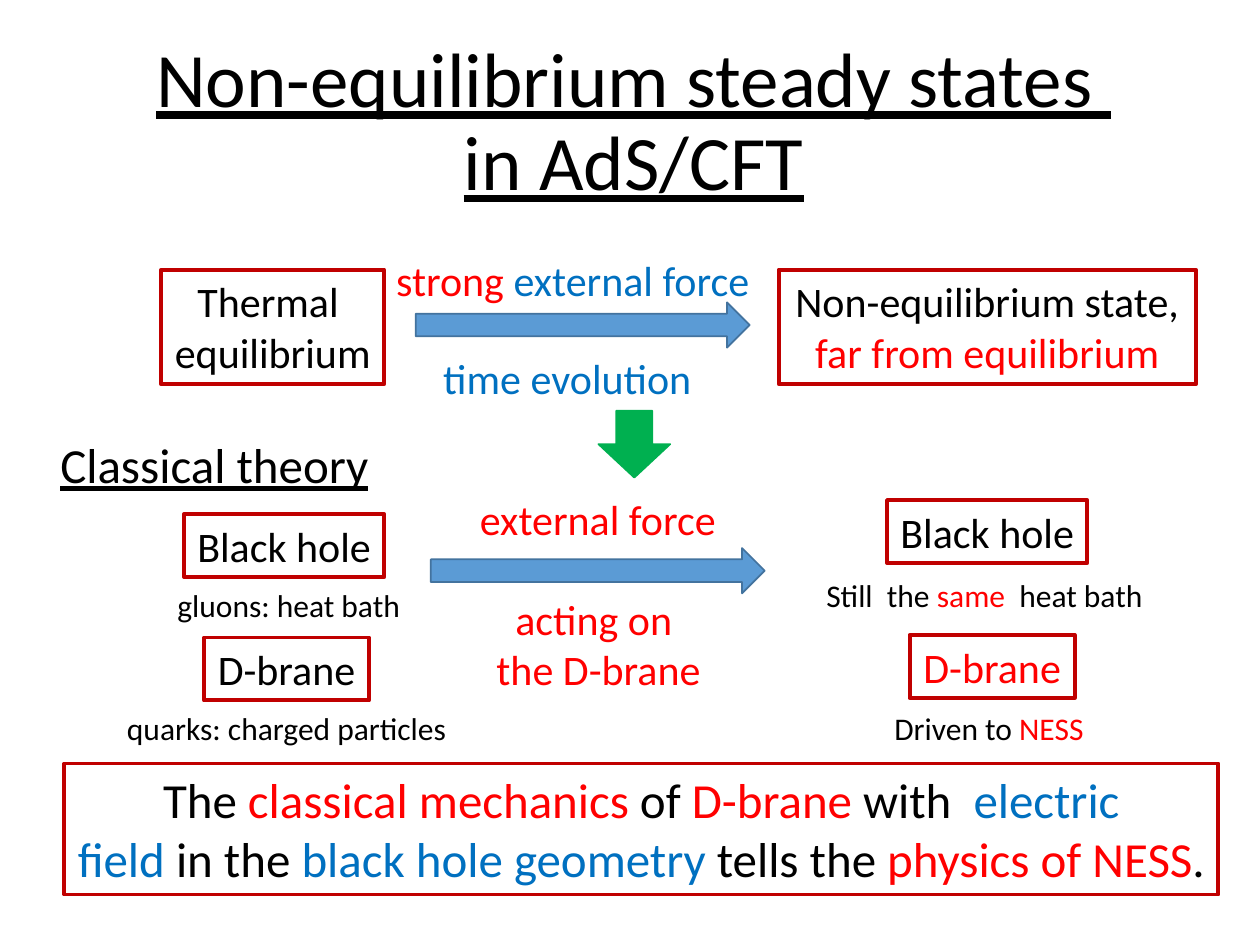
import pptx
import pptx.util
import pptx.dml.color
import pptx.enum.shapes
import pptx.enum.text

Pt = pptx.util.Pt
SHAPE = pptx.enum.shapes.MSO_SHAPE
ALIGN = pptx.enum.text.PP_ALIGN
FONT = "Calibri"
BLACK, RED, BLUE = "000000", "FF0000", "0070C0"
FRAME, FILL, EDGE, GREEN = "C00000", "5B9BD5", "43739E", "00B050"


def color(code):
    return pptx.dml.color.RGBColor.from_string(code)


def place(box, left, top, width, height):
    """Turn offsets within a region into slide lengths."""
    return [Pt(v) for v in (box[0] + left, box[1] + top, width, height)]


def write(shape, lines, size, align=ALIGN.CENTER, wrap=False):
    """Fill a shape with lines, each a list of (words, colour) runs."""
    frame = shape.text_frame
    frame.word_wrap = wrap
    frame.auto_size = pptx.enum.text.MSO_AUTO_SIZE.SHAPE_TO_FIT_TEXT
    for i, line in enumerate(lines):
        para = frame.add_paragraph() if i else frame.paragraphs[0]
        para.alignment = align
        para.font.size, para.font.name = Pt(size), FONT
        for words, code in line:
            run = para.add_run()
            run.text = words
            run.font.color.rgb = color(code)


def label(slide, spot, lines, size=24, align=ALIGN.CENTER):
    shape = slide.shapes.add_textbox(*spot)
    write(shape, lines, size, align)
    return shape


def framed(slide, spot, lines, size=24, wrap=False):
    shape = slide.shapes.add_shape(SHAPE.RECTANGLE, *spot)
    shape.shadow.inherit = False
    shape.fill.background()
    shape.line.color.rgb = color(FRAME)
    shape.line.width = Pt(2.25)
    write(shape, lines, size, wrap=wrap)
    shape.text_frame.vertical_anchor = pptx.enum.text.MSO_ANCHOR.TOP


def arrow(slide, spot, kind=SHAPE.RIGHT_ARROW, fill=FILL, edge=EDGE):
    shape = slide.shapes.add_shape(kind, *spot)
    shape.shadow.inherit = False
    shape.fill.solid()
    shape.fill.fore_color.rgb = color(fill)
    shape.line.color.rgb = color(edge)
    shape.line.width = Pt(1)


def heading(slide, box):
    title = slide.shapes.title
    title.left, title.top, title.width, title.height = place(box, 0, 0, 620.6, 104.4)
    frame = title.text_frame
    frame.text = "Non-equilibrium steady states \vin AdS/CFT"
    frame.vertical_anchor = pptx.enum.text.MSO_ANCHOR.MIDDLE
    para = frame.paragraphs[0]
    para.alignment, para.line_spacing = ALIGN.CENTER, 0.9
    font = para.font
    font.name, font.size, font.underline = FONT, Pt(44), True
    font.color.rgb = color(BLACK)


def evolve(slide, box):
    """Thermal equilibrium driven to a non-equilibrium state."""
    framed(slide, place(box, 0, 0, 127.4, 65.5),
           [[("Thermal ", BLACK)], [("equilibrium", BLACK)]])
    label(slide, place(box, 126, -12.2, 218.2, 36),
          [[("strong", RED), (" external force", BLUE)]])
    arrow(slide, place(box, 145.4, 18.7, 190.8, 25.9))
    label(slide, place(box, 154, 44, 157.7, 36),
          [[("time evolution", BLUE)]], align=ALIGN.LEFT)
    framed(slide, place(box, 352.8, 0, 238.3, 65.5),
           [[("Non-equilibrium state,", BLACK)],
            [("far from equilibrium", RED)]], wrap=True)


def force(slide, box):
    """External force acting on the D-brane."""
    label(slide, place(box, 20.2, 0, 150.5, 36), [[("external force", RED)]])
    arrow(slide, place(box, 0, 34.6, 190.8, 25.9))
    label(slide, place(box, 29.6, 57, 132.5, 65.5),
          [[("acting on ", RED)], [("the D-brane", RED)]])


def pair(slide, box, name, width, indent, note, span, drop, tint=BLACK):
    """A framed name with a note below it."""
    framed(slide, place(box, indent, 0, width, 36), [[(name, tint)]])
    label(slide, place(box, 0, drop, span, 28.8), [note], 18, ALIGN.LEFT)


def theory(slide, box):
    """Classical theory: black hole and D-brane, before and after."""
    head = label(slide, place(box, 0, 0, 192.2, 41),
                 [[("Classical theory", BLACK)]], 28, ALIGN.LEFT)
    head.text_frame.paragraphs[0].font.underline = True
    x, y = box
    hole, brane = ("Black hole", 114.5), ("D-brane", 94.3)
    # Before
    pair(slide, (x + 66.9, y + 49), *hole, 10.8,
         [("gluons: heat bath", BLACK)], 143.3, 37.4)
    pair(slide, (x + 38.1, y + 119.5), *brane, 51.1,
         [("quarks: charged particles", BLACK)], 199.4, 37.5)
    force(slide, (x + 218.8, y + 33.8))
    # After
    pair(slide, (x + 437.7, y + 41), *hole, 41.8,
         [("Still  the ", BLACK), ("same", RED), ("  heat bath", BLACK)],
         197.3, 39.6)
    pair(slide, (x + 476.6, y + 118.1), *brane, 15.8,
         [("Driven to ", BLACK), ("NESS", RED)], 123.8, 38.9, RED)


def summary(slide, box):
    framed(slide, place(box, 0, 0, 659.5, 74.9), [
        [("The ", BLACK), ("classical mechanics ", RED), ("of ", BLACK),
         ("D-brane", RED), (" with  ", BLACK), ("electric", BLUE)],
        [("field ", BLUE), ("in the ", BLACK), ("black hole geometry ", BLUE),
         ("tells the ", BLACK), ("physics of NESS", RED), (".", BLACK)],
    ], 28)


def main():
    deck = pptx.Presentation()
    deck.slide_width, deck.slide_height = Pt(720), Pt(540)
    slide = deck.slides.add_slide(deck.slide_layouts[5])
    heading(slide, (51.8, 18.7))
    evolve(slide, (92.2, 154.1))
    arrow(slide, place((342, 234.7), 0, 0, 41, 38.2),
          SHAPE.DOWN_ARROW, GREEN, GREEN)
    theory(slide, (27.4, 244.8))
    summary(slide, (36.7, 436.3))
    deck.save("out.pptx")


if __name__ == "__main__":
    main()
